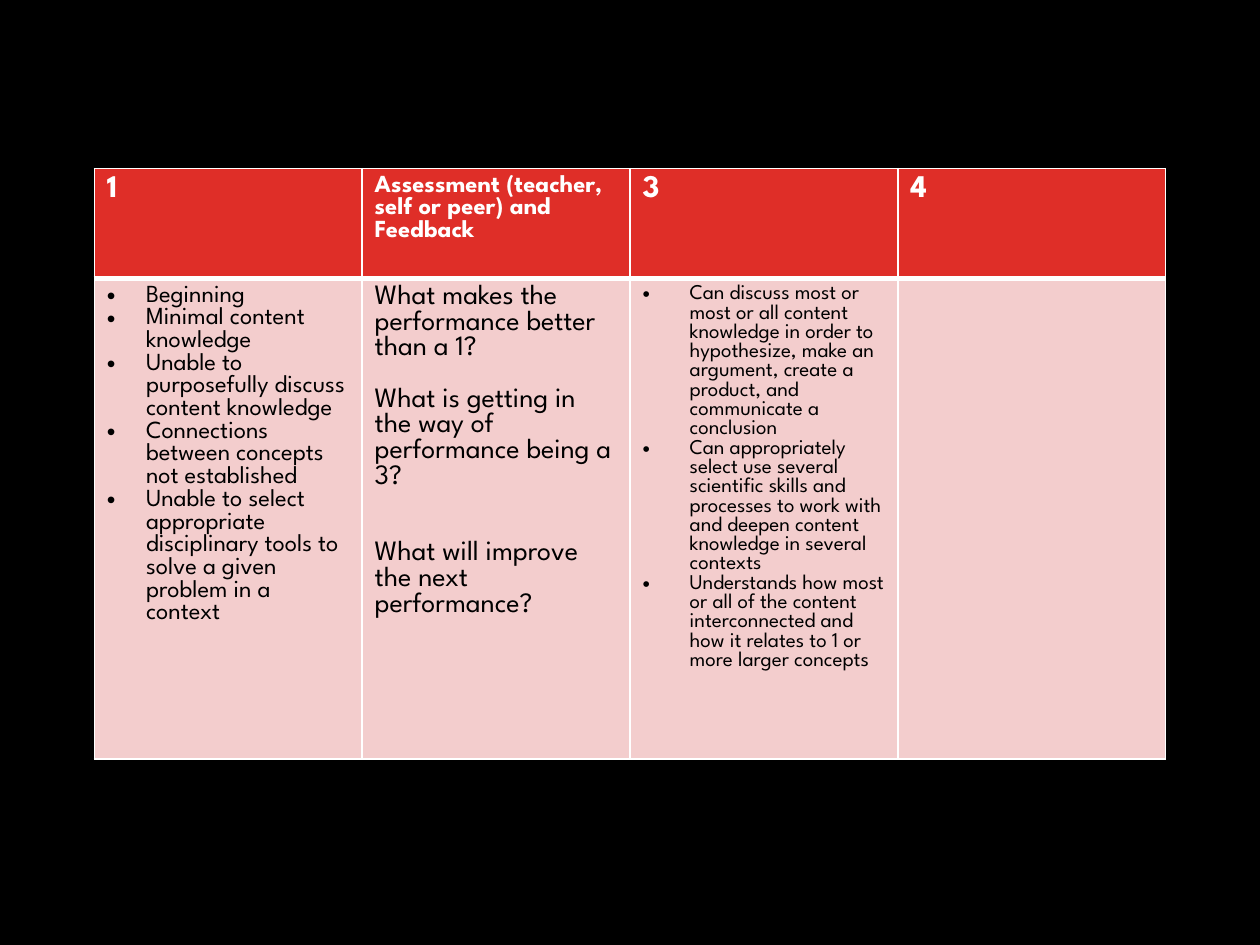
from lxml import etree
from pptx import Presentation, util as u
from pptx.dml import color
from pptx.oxml import ns

COLORS = {"background": "000000", "header": "DF2E28", "body": "F3CDCD",
          "border": "FFFFFF", "header_text": "FFFFFF", "body_text": "000000"}
FORMATS = {
    "header": {"name": "League Spartan", "bold": True},
    "body": {"name": "League Spartan", "bold": False},
}

# Header cells: text, size in points
HEADERS = [("1", 18), ("Assessment (teacher, self or peer) and Feedback", 14),
           ("3", 18), ("4", 18)]

# Body cells: paragraphs, size in points, bullet indent in cm, blank-line gaps before
BODIES = [
    (["Beginning",
      "Minimal content knowledge",
      "Unable to purposefully discuss content knowledge",
      "Connections between concepts not established",
      "Unable to select appropriate disciplinary tools to solve a given problem in a context"],
     14, 0.79, ()),
    (["What makes the performance better than a 1?",
      "What is getting in the way of performance being a 3?",
      "What will improve the next performance?"],
     16, 0, (0, 1, 2)),
    (["Can discuss most or most or all content knowledge in order to hypothesize, "
      "make an argument, create a product, and communicate a conclusion",
      "Can appropriately select use several scientific skills and processes to work "
      "with and deepen content knowledge in several contexts",
      "Understands how most or all of the content interconnected and how it relates "
      "to 1 or more larger concepts"],
     12, 0.95, ()),
    ([], 12, 0, ()),
]
BLANK_LINE = 14.6  # points


def rgb(name):
    return color.RGBColor.from_string(COLORS[name])


class RubricSlide:
    def __init__(self, presentation):
        self.slide = presentation.slides.add_slide(presentation.slide_layouts[6])
        fill = self.slide.background.fill
        fill.solid()
        fill.fore_color.rgb = rgb("background")

    def table(self, left, top, column_width, row_heights, columns):
        shape = self.slide.shapes.add_table(
            len(row_heights), columns, u.Cm(left), u.Cm(top),
            u.Cm(column_width * columns), u.Cm(sum(row_heights)))
        table = shape.table
        table.horz_banding = False
        for column in table.columns:
            column.width = u.Cm(column_width)
        for row, height in zip(table.rows, row_heights):
            row.height = u.Cm(height)
        return table

    def cell(self, cell, kind, paragraphs, size, indent=0, gaps=()):
        self.borders(cell, {"L": 1, "R": 1, "T": 1 if kind == "header" else 3,
                            "B": 3 if kind == "header" else 1})
        cell.fill.solid()
        cell.fill.fore_color.rgb = rgb(kind)
        frame = cell.text_frame
        for index, words in enumerate(paragraphs):
            paragraph = frame.paragraphs[0] if index == 0 else frame.add_paragraph()
            if indent:
                self.bullet(paragraph, indent)
            if gaps and gaps[index]:
                paragraph.space_before = u.Pt(BLANK_LINE * gaps[index])
            run = paragraph.add_run()
            run.text = words
            for name, value in {**FORMATS[kind], "size": u.Pt(size)}.items():
                setattr(run.font, name, value)
            run.font.color.rgb = rgb(kind + "_text")

    def borders(self, cell, widths):
        properties = cell._tc.get_or_add_tcPr()
        for side in "LRTB":
            line = etree.SubElement(properties, ns.qn("a:ln" + side),
                                    w=str(u.Pt(widths[side])))
            fill = etree.SubElement(line, ns.qn("a:solidFill"))
            etree.SubElement(fill, ns.qn("a:srgbClr"), val=COLORS["border"])

    def bullet(self, paragraph, indent):
        properties = paragraph._p.get_or_add_pPr()
        properties.set("marL", str(u.Cm(indent)))
        properties.set("indent", str(-u.Cm(indent)))
        etree.SubElement(properties, ns.qn("a:buFont"), typeface="Arial")
        etree.SubElement(properties, ns.qn("a:buChar"), char="•")


def main():
    presentation = Presentation()
    presentation.slide_width = u.Cm(25.4)
    presentation.slide_height = u.Cm(19.05)
    rubric = RubricSlide(presentation)

    # Rubric grid
    table = rubric.table(1.9, 3.4, 5.4, (2.22, 9.68), len(HEADERS))

    # Header row
    for column, (words, size) in enumerate(HEADERS):
        rubric.cell(table.cell(0, column), "header", [words], size)

    # Descriptions
    for column, body in enumerate(BODIES):
        rubric.cell(table.cell(1, column), "body", *body)

    presentation.save("out.pptx")


if __name__ == "__main__":
    main()
